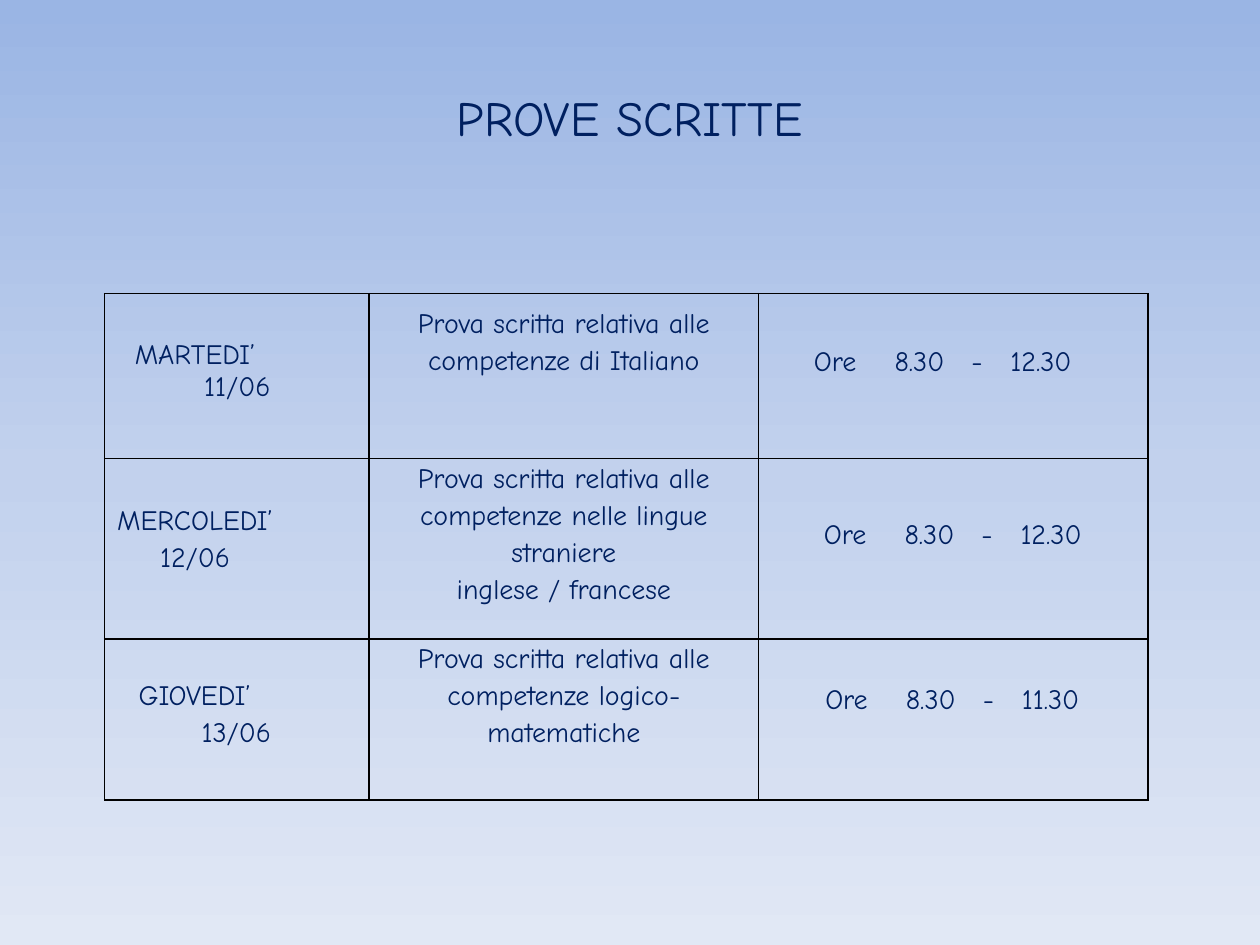
from copy import deepcopy
from dataclasses import dataclass

from lxml.etree import SubElement
from pptx import Presentation
from pptx.dml.color import RGBColor as Color
from pptx.enum.text import MSO_ANCHOR as Anchor, PP_ALIGN as Align
from pptx.oxml import parse_xml
from pptx.oxml.ns import nsdecls, qn
from pptx.util import Inches, Pt


@dataclass(frozen=True)
class Theme:
    font: str = "Comic Neue"
    ink: str = "002060"
    border: str = "000000"
    gradient: tuple = ("9AB5E4", "C2D1ED", "E1E8F5")
    title_size: int = 28
    body_size: int = 16
    border_width: int = 1
    line_spacing: float = 1.15


def apply(target, values):
    for name, value in values.items():
        setattr(target, name, value)


class SlideBuilder:
    def __init__(self, slide, theme):
        self.slide = slide
        self.theme = theme

    def background(self):
        fill = self.slide.background.fill
        fill.gradient()
        fill.gradient_angle = 270
        stop_list = self.slide.element.xpath(".//a:gsLst")[0]
        stop_list.insert(1, deepcopy(stop_list[0]))
        for stop, color, position in zip(fill.gradient_stops, self.theme.gradient,
                                         (0, 0.5, 1)):
            stop.position = position
            stop.color.rgb = Color.from_string(color)

    def add_text(self, paragraph, text, size, **layout):
        run = paragraph.add_run()
        run.text = text
        apply(run.font, {"name": self.theme.font, "size": Pt(size)})
        run.font.color.rgb = Color.from_string(self.theme.ink)
        apply(paragraph, layout)

    def title(self, text, left, top, width, height):
        title = self.slide.shapes.title
        apply(title, {"left": Inches(left), "top": Inches(top),
                      "width": Inches(width), "height": Inches(height)})
        title.text_frame.vertical_anchor = Anchor.MIDDLE
        self.add_text(title.text_frame.paragraphs[0], text,
                      self.theme.title_size, alignment=Align.CENTER)

    def table(self, left, top, widths, heights):
        table = self.slide.shapes.add_table(
            len(heights), len(widths), Inches(left), Inches(top),
            Inches(sum(widths)), Inches(sum(heights))).table
        apply(table, {"first_row": False, "horz_banding": False})
        for column, width in zip(table.columns, widths):
            column.width = Inches(width)
        for row, height in zip(table.rows, heights):
            row.height = Inches(height)
        for cell in table.iter_cells():
            cell.fill.background()
            self.borders(cell)
        return table

    def borders(self, cell):
        properties = cell._tc.get_or_add_tcPr()
        for index, side in enumerate("LRTB"):
            properties.insert(index, parse_xml(
                f'<a:ln{side} {nsdecls("a")} w="{Pt(self.theme.border_width)}">'
                f'<a:solidFill><a:srgbClr val="{self.theme.border}"/></a:solidFill>'
                f'</a:ln{side}>'))

    def cell(self, cell, lines, top, left=0.07, align=Align.LEFT,
             spacing=None, indent=0, tabs=()):
        apply(cell, {"margin_left": Inches(left), "margin_right": Inches(0.07),
                     "margin_top": Inches(top), "margin_bottom": 0,
                     "vertical_anchor": Anchor.TOP})
        frame = cell.text_frame
        for index, text in enumerate(lines):
            paragraph = frame.add_paragraph() if index else frame.paragraphs[0]
            self.add_text(paragraph, text, self.theme.body_size, alignment=align,
                          line_spacing=spacing or self.theme.line_spacing)
            properties = paragraph._p.get_or_add_pPr()
            if index and indent:
                properties.set("marL", str(Inches(indent)))
            if tabs:
                tab_list = SubElement(properties, qn("a:tabLst"))
                for position in tabs:
                    SubElement(tab_list, qn("a:tab"),
                               pos=str(Inches(position)), algn="l")


DAYS = [
    (["MARTEDI’", "11/06"], {"top": 0.36, "left": 0.24, "indent": 0.55, "spacing": 1.0}),
    (["MERCOLEDI’", "12/06"], {"top": 0.33, "left": 0.1, "indent": 0.34}),
    (["GIOVEDI’", "13/06"], {"top": 0.29, "left": 0.27, "indent": 0.5}),
]
EXAMS = [
    (["Prova scritta relativa alle competenze di Italiano"], {"top": 0.08}),
    (["Prova scritta relativa alle competenze nelle lingue straniere",
      "inglese / francese"], {"top": 0}),
    (["Prova scritta relativa alle competenze logico- matematiche"], {"top": 0}),
]
HOURS = [
    ("12.30", {"top": 0.38, "left": 0.44}),
    ("12.30", {"top": 0.44, "left": 0.52}),
    ("11.30", {"top": 0.32, "left": 0.53}),
]


def main():
    presentation = Presentation()
    apply(presentation, {"slide_width": Inches(10), "slide_height": Inches(7.5)})
    slide = presentation.slides.add_slide(presentation.slide_layouts[5])
    builder = SlideBuilder(slide, Theme())
    builder.background()
    builder.title("PROVE SCRITTE", 0.5, 0.3, 9, 1.25)
    table = builder.table(0.83, 2.33, (2.1, 3.09, 3.09), (1.31, 1.43, 1.28))
    for row, (day, exam, hours) in enumerate(zip(DAYS, EXAMS, HOURS)):
        builder.cell(table.cell(row, 0), day[0], **day[1])
        builder.cell(table.cell(row, 1), exam[0], align=Align.CENTER, **exam[1])
        builder.cell(table.cell(row, 2), [f"Ore\t8.30\t-\t{hours[0]}"],
                     tabs=(0.64, 1.25, 1.56), **hours[1])
    presentation.save("out.pptx")


if __name__ == "__main__":
    main()
